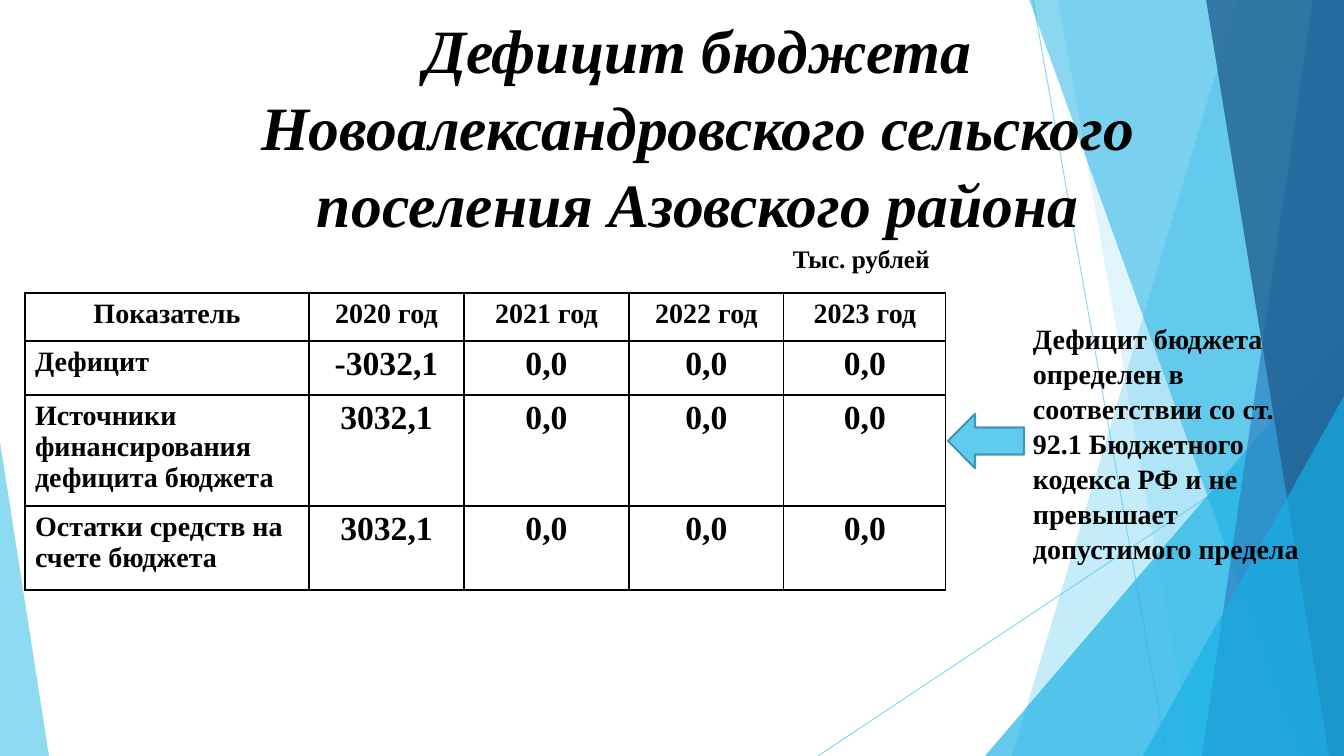
from lxml import etree
from pptx import Presentation
from pptx import util as u
from pptx.dml.color import RGBColor
from pptx.enum import shapes, text
from pptx.oxml import parse_xml
from pptx.oxml.ns import nsdecls, qn

HUE = {"sky": "5FCBEF", "cyan": "17B0E4", "blue": "2E83C3", "navy": "226292",
       "edge": "4696B1", "ink": "000000"}
PX = u.Inches(1) / 100.8


def box(*sizes):
    return [round(n * PX) for n in sizes]


def style(par, size, align=text.PP_ALIGN.LEFT):
    par.alignment = align
    par.font.name = "Times New Roman"
    par.font.size = u.Pt(size)
    par.font.bold = True
    par.font.color.rgb = RGBColor.from_string(HUE["ink"])


deck = Presentation()
deck.slide_width, deck.slide_height = box(1344, 756)
slide = deck.slides.add_slide(deck.slide_layouts[5])
items = slide.shapes

for ends in ((1033, 0, 1167, 756), (1344, 406, 818, 756)):
    line = items.add_connector(shapes.MSO_CONNECTOR.STRAIGHT, *box(*ends))
    line.line.width = u.Pt(0.75)
    line.line.color.rgb = RGBColor.from_string(HUE["sky"])
    tint = line.line.fill._xPr.find(".//" + qn("a:srgbClr"))
    etree.SubElement(tint, qn("a:alpha"), val="70000")
    etree.SubElement(line._element.spPr, qn("a:effectLst"))

facets = [
    ("sky", 36, "pane", (1238, 1012)),
    ("sky", 20, "pane", (1058, 1192)),
    ("cyan", 66, "peak", (985, 336, 359, 420, 1)),
    ("cyan", 50, "pane", (1029, 1301)),
    ("blue", 70, "pane", (1313, 1202)),
    ("navy", 80, "pane", (1206, 1329)),
    ("cyan", 66, "peak", (1143, 396, 201, 360, 1)),
    ("sky", 70, "peak", (0, 442, 49, 314, 0)),
]
for hue, alpha, kind, dims in facets:
    if kind == "pane":
        top, base = dims
        path = items.build_freeform(top, -1, PX)
        path.add_line_segments([(1344, -1), (1344, 756), (base, 756)])
        facet = path.convert_to_shape()
    else:
        facet = items.add_shape(shapes.MSO_SHAPE.ISOSCELES_TRIANGLE, *box(*dims[:4]))
        facet.adjustments[0] = dims[4]
    facet.shadow.inherit = False
    facet.line.fill.background()
    facet.fill.solid()
    facet.fill.fore_color.rgb = RGBColor.from_string(HUE[hue])
    tint = facet._element.spPr.find(".//" + qn("a:srgbClr"))
    etree.SubElement(tint, qn("a:alpha"), val=str(alpha * 1000))

title = items.title
items._spTree.append(title._element)
title.left, title.top, title.width, title.height = box(156, 21, 1084, 207)
frame = title.text_frame
frame.text = "Дефицит бюджета Новоалександровского сельского поселения Азовского района"
frame.word_wrap = True
frame.auto_size = text.MSO_AUTO_SIZE.NONE
frame.vertical_anchor = text.MSO_ANCHOR.MIDDLE
frame.margin_left = frame.margin_right = frame.margin_top = frame.margin_bottom = 0
head = frame.paragraphs[0]
style(head, 44, text.PP_ALIGN.CENTER)
head.font.italic = True
head.line_spacing = 1.04
glow = parse_xml(
    f'<a:effectLst {nsdecls("a")}><a:outerShdw blurRad="38100" dist="38100" dir="2700000">'
    '<a:srgbClr val="000000"><a:alpha val="43000"/></a:srgbClr></a:outerShdw></a:effectLst>')
head.runs[0].font._element.append(glow)

note = items.add_textbox(*box(1023, 156, 305, 414)).text_frame
note.word_wrap = True
note.vertical_anchor = text.MSO_ANCHOR.BOTTOM
note.text = ("Дефицит бюджета определен в соответствии со ст. 92.1 "
             "Бюджетного кодекса РФ и не превышает допустимого предела")
style(note.paragraphs[0], 20)
note.paragraphs[0].line_spacing = 1.04

rows = [
    ("Показатель", "2020 год", "2021 год", "2022 год", "2023 год"),
    ("Дефицит", "-3032,1", "0,0", "0,0", "0,0"),
    ("Источники финансирования дефицита бюджета", "3032,1", "0,0", "0,0", "0,0"),
    ("Остатки средств на счете бюджета", "3032,1", "0,0", "0,0", "0,0"),
]
widths = box(284, 155, 165, 155, 162)
heights = box(48, 54, 111, 84)
table = items.add_table(4, 5, *box(25, 293), sum(widths), sum(heights)).table
for col, width in zip(table.columns, widths):
    col.width = width
for row, height in zip(table.rows, heights):
    row.height = height
for r, row in enumerate(rows):
    for c, value in enumerate(row):
        cell = table.cell(r, c)
        cell.text = value
        left = r > 0 and c == 0
        style(cell.text_frame.paragraphs[0], 24 if r and c else 20,
              text.PP_ALIGN.LEFT if left else text.PP_ALIGN.CENTER)
        props = cell._tc.get_or_add_tcPr()
        for side in ("lnL", "lnR", "lnT", "lnB"):
            props.append(parse_xml(
                f'<a:{side} {nsdecls("a")} w="12700"><a:solidFill>'
                f'<a:srgbClr val="{HUE["ink"]}"/></a:solidFill></a:{side}>'))
        cell.fill.background()

unit = items.add_textbox(*box(783, 238, 158, 40)).text_frame
unit.word_wrap = False
unit.text = "Тыс. рублей"
style(unit.paragraphs[0], 18)

arrow = items.add_shape(shapes.MSO_SHAPE.LEFT_ARROW, *box(948, 414, 76, 54))
arrow.shadow.inherit = False
arrow.fill.solid()
arrow.fill.fore_color.rgb = RGBColor.from_string(HUE["sky"])
arrow.line.color.rgb = RGBColor.from_string(HUE["edge"])
arrow.line.width = u.Pt(1.5)

deck.save("out.pptx")
